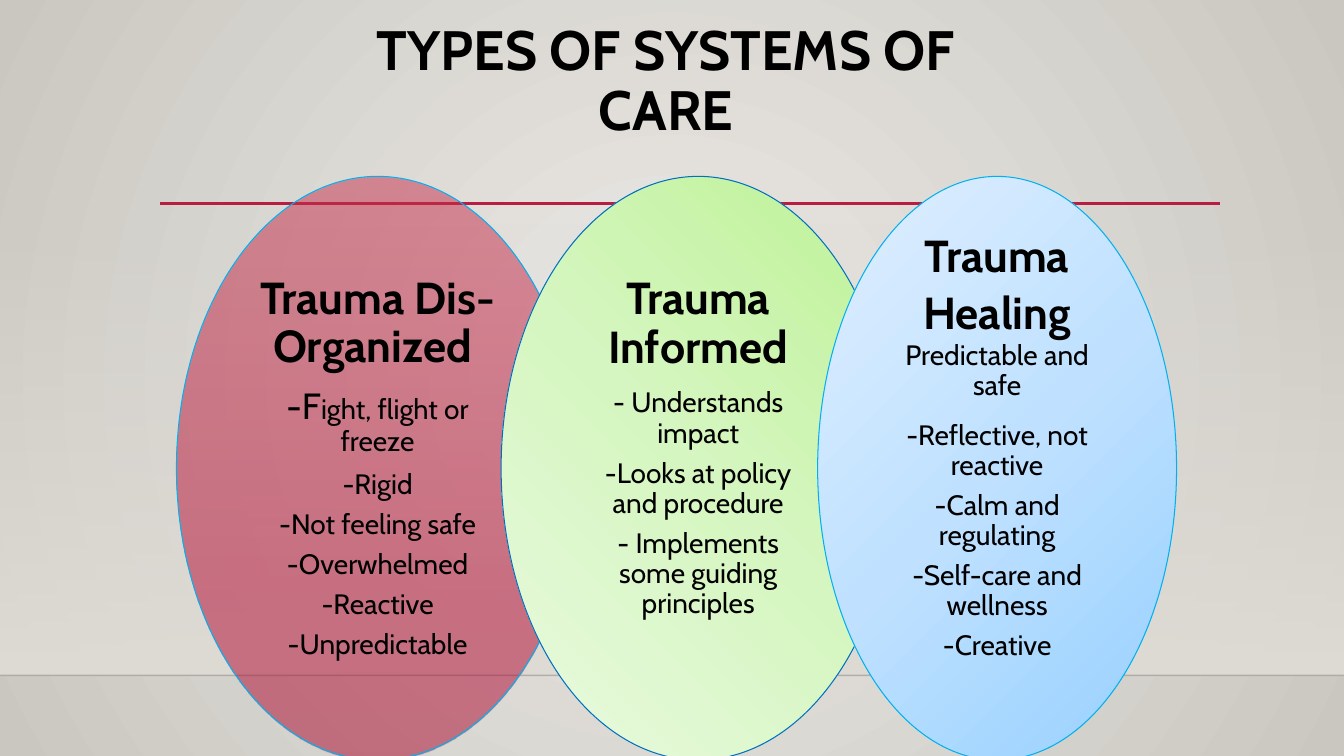
from lxml import etree
from pptx import Presentation, util as u
from pptx.dml.color import RGBColor
from pptx.enum import shapes, text
from pptx.oxml.ns import qn

WIDE, HIGH = 13.33, 7.5
FONT = "Cabin"
TITLE = "TYPES OF SYSTEMS OF CARE"
FLOOR = 6.7
TOP, TALL = 1.75, 5.79
INSET = 0.146  # share of an oval outside its text area, on each side
BACK = [(0, "ECEAE7"), (100, "CAC7C1")]
WALL = [(0, "DFDBD5", 0), (100, "DFDBD5")]

# Each paragraph is a list of (words, size, bold) runs.
OVALS = [
    dict(left=1.75, wide=3.99, line="00B0F0", foot=0.04,
         stops=[(0, "C7304C", 50), (69, "B3062F", 50), (100, "AA062C", 50)],
         fade=dict(angle=90),
         head=[[("Trauma Dis-Organized ", 32, True)],
               [("-F", 26, False), ("ight, flight or freeze", 20, False)]],
         items=["-Rigid", "-Not feeling safe", "-Overwhelmed", "-Reactive",
                "-Unpredictable"]),
    dict(left=4.97, wide=3.91, line="0070C0", foot=0.44,
         stops=[(0, "BEF297"), (50, "D5F6C0"), (100, "EAFAE0")],
         fade=dict(angle=135),
         head=[[("Trauma Informed", 32, True)]],
         items=["- Understands impact", "-Looks at policy and procedure",
                "- Implements some guiding principles"]),
    dict(left=8.11, wide=3.56, line="00B0F0", foot=0.44,
         stops=[(0, "96D0FF"), (50, "BFE1FF"), (100, "E0EFFF")],
         fade=dict(focus=(100, 100, 0, 0)),
         head=[[("Trauma Healing", 32, True), (" ", 39, False),
                ("Predictable and safe", 20, False)]],
         items=["-Reflective, not reactive", "-Calm and regulating",
                "-Self-care and wellness", "-Creative"]),
]


def color(code):
    return RGBColor.from_string(code)


def sub(node, tag, **attrs):
    return etree.SubElement(node, qn(tag), {k: str(v) for k, v in attrs.items()})


def blend(props, stops, angle=None, focus=None):
    """Swap the solid fill in props for a linear or circular gradient."""
    grad = etree.Element(qn("a:gradFill"), rotWithShape="1")
    row = sub(grad, "a:gsLst")
    for pos, code, *alpha in stops:
        tint = sub(sub(row, "a:gs", pos=pos * 1000), "a:srgbClr", val=code)
        if alpha:
            sub(tint, "a:alpha", val=alpha[0] * 1000)
    if focus:
        sides = {k: v * 1000 for k, v in zip("ltrb", focus)}
        sub(sub(grad, "a:path", path="circle"), "a:fillToRect", **sides)
    else:
        sub(grad, "a:lin", ang=angle * 60000, scaled=0)
    props.replace(props.find(qn("a:solidFill")), grad)


def shape(slide, kind, box, stops, line=None, **fade):
    form = slide.shapes.add_shape(kind, *map(u.Inches, box))
    form.shadow.inherit = False
    form.fill.solid()
    form.fill.fore_color.rgb = color(stops[0][1])
    blend(form.element.spPr, stops, **fade)
    if line:
        form.line.color.rgb = color(line)
        form.line.width = u.Pt(0.75)
    else:
        form.line.fill.background()


def rule(slide, left, right, y, code, width, alpha=100):
    line = slide.shapes.add_connector(
        shapes.MSO_CONNECTOR.STRAIGHT, *map(u.Inches, (left, y, right, y)))
    line.line.color.rgb = color(code)
    line.line.width = u.Pt(width)
    props = line.element.spPr
    sub(props.find(".//" + qn("a:srgbClr")), "a:alpha", val=alpha * 1000)
    sub(props, "a:effectLst")


def write(slide, box, paras, side=0.1, head=0.05, foot=0.05, after=0):
    """Add centred text; after is a share of each paragraph's largest size."""
    frame = slide.shapes.add_textbox(*map(u.Inches, box)).text_frame
    frame.word_wrap = True
    frame.vertical_anchor = text.MSO_ANCHOR.MIDDLE
    frame.margin_left = frame.margin_right = u.Inches(side)
    frame.margin_top, frame.margin_bottom = u.Inches(head), u.Inches(foot)
    for i, runs in enumerate(paras):
        para = frame.add_paragraph() if i else frame.paragraphs[0]
        para.alignment = text.PP_ALIGN.CENTER
        para.line_spacing = 0.9
        para.space_after = u.Pt(after * max(size for _, size, _ in runs))
        for words, size, bold in runs:
            run = para.add_run()
            run.text = words
            run.font.name, run.font.size = FONT, u.Pt(size)
            run.font.bold = bold
            run.font.color.rgb = color("000000")


def main():
    deck = Presentation()
    deck.slide_width, deck.slide_height = u.Inches(WIDE), u.Inches(HIGH)
    slide = deck.slides.add_slide(deck.slide_layouts[6])
    slide.background.fill.solid()
    blend(slide.element.find(".//" + qn("p:bgPr")), BACK, focus=(50,) * 4)

    shape(slide, shapes.MSO_SHAPE.RECTANGLE, (0, 2.21, WIDE, FLOOR - 2.21),
          WALL, angle=90)
    rule(slide, 0, WIDE, FLOOR, "000001", 1, alpha=20)
    rule(slide, 1.59, 12.1, 2.02, "B71E42", 2.5)
    write(slide, (3.36, 0.17, 6.49, 1.3), [[(TITLE, 39.6, True)]])

    for oval in OVALS:
        left, wide = oval["left"], oval["wide"]
        shape(slide, shapes.MSO_SHAPE.OVAL, (left, TOP, wide, TALL),
              oval["stops"], oval["line"], **oval["fade"])
        area = (left + INSET * wide, TOP + INSET * TALL,
                (1 - 2 * INSET) * wide, (1 - 2 * INSET) * TALL)
        paras = oval["head"] + [[(item, 20, False)] for item in oval["items"]]
        write(slide, area, paras, side=0.23, head=0.04, foot=oval["foot"],
              after=0.35)
    deck.save("out.pptx")


if __name__ == "__main__":
    main()
